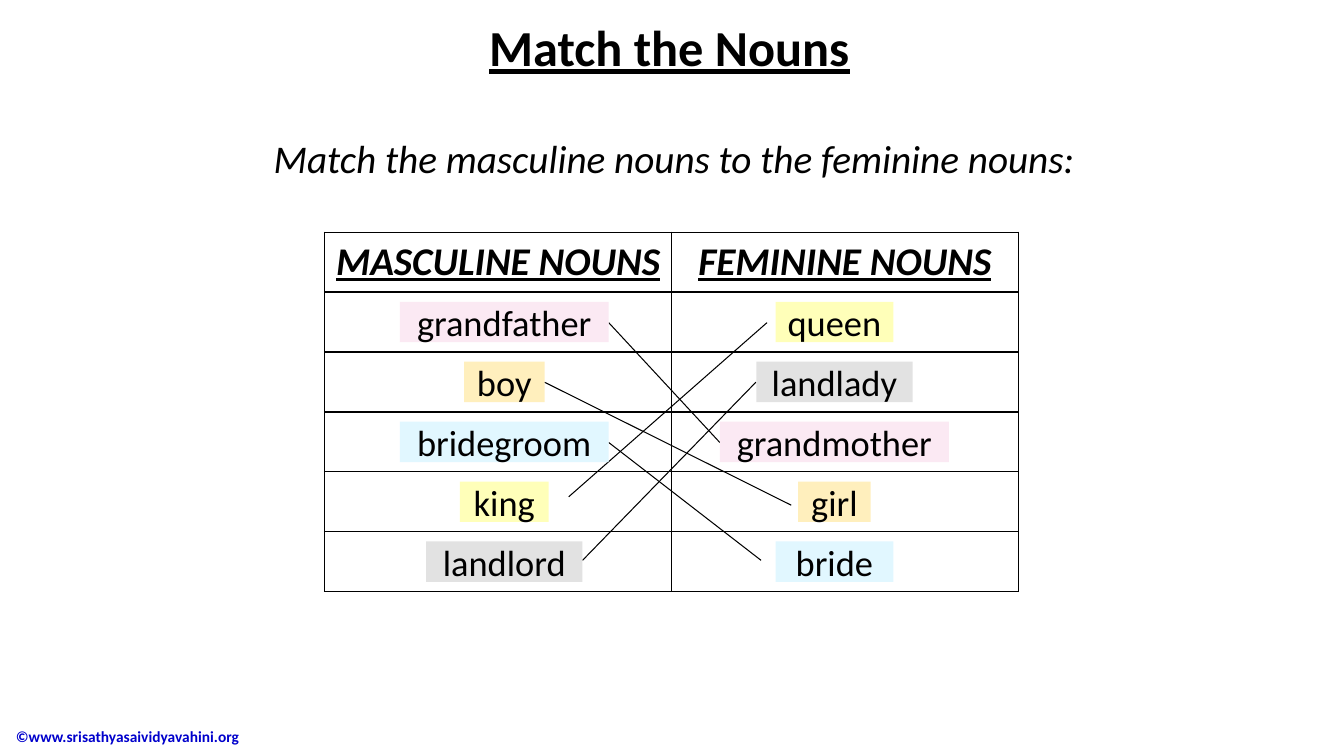
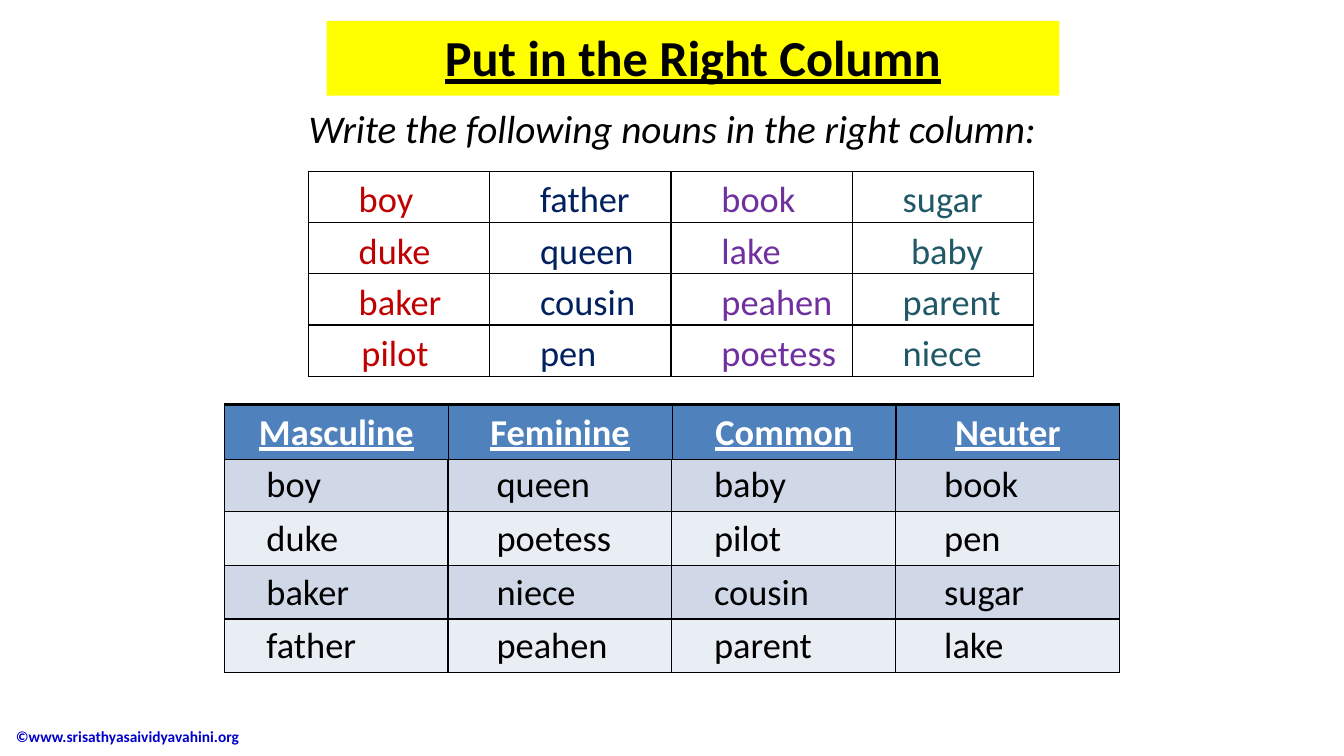
from dataclasses import dataclass

from lxml.etree import SubElement
from pptx import Presentation
from pptx.dml.color import RGBColor
from pptx.enum.shapes import MSO_CONNECTOR, MSO_SHAPE
from pptx.enum.text import MSO_ANCHOR, PP_ALIGN
from pptx.oxml.ns import qn
from pptx.util import Cm, Pt

BLACK = RGBColor(0x00, 0x00, 0x00)
WHITE = RGBColor(0xFF, 0xFF, 0xFF)
YELLOW = RGBColor(0xFF, 0xFF, 0x00)
FOOTER_BLUE = RGBColor(0x00, 0x00, 0xCC)
HEADER_BLUE = RGBColor(0x4F, 0x81, 0xBD)
BAND_DARK = RGBColor(0xD0, 0xD8, 0xE8)
BAND_LIGHT = RGBColor(0xE9, 0xED, 0xF4)
PINK = RGBColor(0xFB, 0xE9, 0xF3)
ORANGE = RGBColor(0xFF, 0xEF, 0xBD)
SKY = RGBColor(0xE1, 0xF7, 0xFF)
LEMON = RGBColor(0xFF, 0xFF, 0xB9)
GREY = RGBColor(0xE2, 0xE2, 0xE2)
RED = RGBColor(0xC0, 0x00, 0x00)
NAVY = RGBColor(0x00, 0x20, 0x60)
PURPLE = RGBColor(0x70, 0x30, 0xA0)
TEAL = RGBColor(0x20, 0x58, 0x67)

BASE_FONT = {"name": "Calibri", "size": Pt(26), "bold": False,
             "italic": False, "underline": False}
TITLE_FONT = {"size": Pt(36), "bold": True, "underline": True}
INSTRUCTION_FONT = {"size": Pt(28), "italic": True}
NOUN_HEADER_FONT = {"size": Pt(28), "bold": True, "italic": True, "underline": True}
ANSWER_HEADER_FONT = {"bold": True, "underline": True}
FOOTER_FONT = {"size": Pt(11), "bold": True}

# Geometry of the matching table, in centimetres
MATCH_LEFT, MATCH_TOP, MATCH_COLUMN, MATCH_ROW = 8.18, 5.85, 8.74, 1.51
LABEL_HEIGHT = 1.02
MASCULINE_CENTRE, FEMININE_CENTRE = 12.71, 21.03


@dataclass
class Match:
    """A noun pair: table row and label width of each noun, and the line's ends."""
    masculine: tuple
    feminine: tuple
    fill: RGBColor
    start: tuple
    end: tuple


MATCHES = [
    Match(("grandfather", 1, 5.26), ("grandmother", 3, 5.77), PINK,
          (15.34, 8.13), (18.14, 11.15)),
    Match(("boy", 2, 2.03), ("girl", 4, 1.83), ORANGE,
          (13.72, 9.63), (19.94, 12.73)),
    Match(("bridegroom", 3, 5.26), ("bride", 5, 2.97), SKY,
          (15.34, 11.15), (19.18, 14.12)),
    Match(("king", 4, 2.24), ("queen", 1, 2.97), LEMON,
          (14.33, 12.52), (19.33, 8.13)),
    Match(("landlord", 5, 3.94), ("landlady", 2, 3.94), GREY,
          (14.68, 14.12), (19.05, 9.63)),
]

WORD_BANK = [
    ["boy", "father", "book", "sugar"],
    ["duke", "queen", "lake", "baby"],
    ["baker", "cousin", "peahen", "parent"],
    ["pilot", "pen", "poetess", "niece"],
]
BANK_COLOURS = [RED, NAVY, PURPLE, TEAL]
BANK_INDENT = 1.27
BANK_INDENT_EXCEPTIONS = {"pilot": 1.34, "baby": 1.48}

ANSWERS = [
    ["Masculine", "Feminine", "Common", "Neuter"],
    ["boy", "queen", "baby", "book"],
    ["duke", "poetess", "pilot", "pen"],
    ["baker", "niece", "cousin", "sugar"],
    ["father", "peahen", "parent", "lake"],
]
ANSWER_INDENTS = [0.81, 0.97, 0.81, 0.97]


def write(frame, text, font=None, colour=BLACK, align=PP_ALIGN.CENTER):
    paragraph = frame.paragraphs[0]
    paragraph.alignment = align
    run = paragraph.add_run()
    run.text = text
    for attribute, value in {**BASE_FONT, **(font or {})}.items():
        setattr(run.font, attribute, value)
    run.font.color.rgb = colour
    return paragraph


def add_text(slide, box, text, font, colour=BLACK, align=PP_ALIGN.CENTER,
             anchor=MSO_ANCHOR.TOP):
    frame = slide.shapes.add_textbox(*map(Cm, box)).text_frame
    frame.word_wrap = True
    frame.vertical_anchor = anchor
    write(frame, text, font, colour, align)
    return frame


def add_block(slide, box, text, fill, font=None, anchor=MSO_ANCHOR.MIDDLE):
    """Add a borderless filled rectangle with centred text."""
    block = slide.shapes.add_shape(MSO_SHAPE.RECTANGLE, *map(Cm, box))
    block.shadow.inherit = False
    block.fill.solid()
    block.fill.fore_color.rgb = fill
    block.line.fill.background()
    block.text_frame.word_wrap = False
    block.text_frame.vertical_anchor = anchor
    write(block.text_frame, text, font)


def add_match_line(slide, start, end):
    line = slide.shapes.add_connector(MSO_CONNECTOR.STRAIGHT, *map(Cm, start + end))
    line.line.color.rgb = BLACK
    line.line.width = Pt(0.75)
    SubElement(line._element.spPr, qn("a:effectLst"))


def border_cell(cell):
    properties = cell._tc.get_or_add_tcPr()
    for position, side in enumerate(("a:lnL", "a:lnR", "a:lnT", "a:lnB")):
        edge = SubElement(properties, qn(side), w=str(Pt(1)))
        properties.insert(position, edge)
        solid = SubElement(edge, qn("a:solidFill"))
        SubElement(solid, qn("a:srgbClr"), val=str(BLACK))


def add_grid(slide, left, top, column_width, row_height, rows, columns):
    """Add a plain table with black borders and no fill."""
    table = slide.shapes.add_table(
        rows, columns, Cm(left), Cm(top),
        Cm(column_width * columns), Cm(row_height * rows)).table
    table.first_row = table.horz_banding = False
    for column in table.columns:
        column.width = Cm(column_width)
    for row in table.rows:
        row.height = Cm(row_height)
    for cell in table.iter_cells():
        cell.fill.background()
        border_cell(cell)
    return table


def indent_cell(cell, indent):
    cell.text_frame.paragraphs[0]._p.get_or_add_pPr().set("marL", str(Cm(indent)))


def add_footer(slide):
    frame = add_text(slide, (0.4, 18.03, 9, 1.04), "©www.srisathyasaividyavahini.org",
                     FOOTER_FONT, FOOTER_BLUE, PP_ALIGN.LEFT, MSO_ANCHOR.MIDDLE)
    frame.margin_left = 0


def add_noun_label(slide, noun, centre, fill):
    text, row, width = noun
    top = MATCH_TOP + (row + 0.5) * MATCH_ROW - LABEL_HEIGHT / 2
    add_block(slide, (centre - width / 2, top, width, LABEL_HEIGHT), text, fill)


def add_match_table(slide):
    table = add_grid(slide, MATCH_LEFT, MATCH_TOP, MATCH_COLUMN, MATCH_ROW,
                     len(MATCHES) + 1, 2)
    for column, heading in enumerate(("MASCULINE NOUNS", "FEMININE NOUNS")):
        cell = table.cell(0, column)
        cell.vertical_anchor = MSO_ANCHOR.MIDDLE
        write(cell.text_frame, heading, NOUN_HEADER_FONT)
    for match in MATCHES:
        add_match_line(slide, match.start, match.end)
    for match in MATCHES:
        add_noun_label(slide, match.masculine, MASCULINE_CENTRE, match.fill)
        add_noun_label(slide, match.feminine, FEMININE_CENTRE, match.fill)


def add_word_bank(slide):
    table = add_grid(slide, 7.77, 4.32, 4.57, 1.29, len(WORD_BANK), len(BANK_COLOURS))
    for row, words in enumerate(WORD_BANK):
        for column, (word, colour) in enumerate(zip(words, BANK_COLOURS)):
            cell = table.cell(row, column)
            cell.vertical_anchor = MSO_ANCHOR.MIDDLE
            for side in ("left", "right", "top", "bottom"):
                setattr(cell, f"margin_{side}", 0)
            paragraph = write(cell.text_frame, word, None, colour, PP_ALIGN.LEFT)
            paragraph.line_spacing = 1.15
            indent_cell(cell, BANK_INDENT_EXCEPTIONS.get(word, BANK_INDENT))


def add_answer_table(slide, left, top, answers):
    """Add a banded table whose first row holds the column headings."""
    table = add_grid(slide, left, top, 5.64, 1.35, len(answers), len(ANSWER_INDENTS))
    for row, words in enumerate(answers):
        band = BAND_DARK if row % 2 else BAND_LIGHT
        for column, word in enumerate(words):
            cell = table.cell(row, column)
            cell.fill.solid()
            cell.fill.fore_color.rgb = band if row else HEADER_BLUE
            if row:
                write(cell.text_frame, word, align=PP_ALIGN.LEFT)
                indent_cell(cell, ANSWER_INDENTS[column])
            else:
                write(cell.text_frame, word, ANSWER_HEADER_FONT, WHITE)


def build_match_slide(slide):
    add_footer(slide)
    add_text(slide, (7.13, 0.28, 19.48, 1.88), "Match the Nouns", TITLE_FONT)
    add_text(slide, (5.98, 3.25, 22, 1.45),
             "Match the masculine nouns to the feminine nouns:", INSTRUCTION_FONT)
    add_match_table(slide)


def build_column_slide(slide):
    add_footer(slide)
    add_word_bank(slide)
    add_block(slide, (8.23, 0.53, 18.47, 1.88), "Put in the Right Column",
              YELLOW, TITLE_FONT, MSO_ANCHOR.TOP)
    add_text(slide, (6.93, 2.51, 20.02, 1.45),
             "Write the following nouns in the right column:", INSTRUCTION_FONT)
    add_answer_table(slide, 5.65, 10.18, ANSWERS)
    add_answer_table(slide, 5.66, 10.22, ANSWERS[:1])


def main():
    deck = Presentation()
    deck.slide_width, deck.slide_height = Cm(33.87), Cm(19.05)
    blank = deck.slide_layouts[6]
    for build in (build_match_slide, build_column_slide):
        build(deck.slides.add_slide(blank))
    deck.save("out.pptx")


if __name__ == "__main__":
    main()
